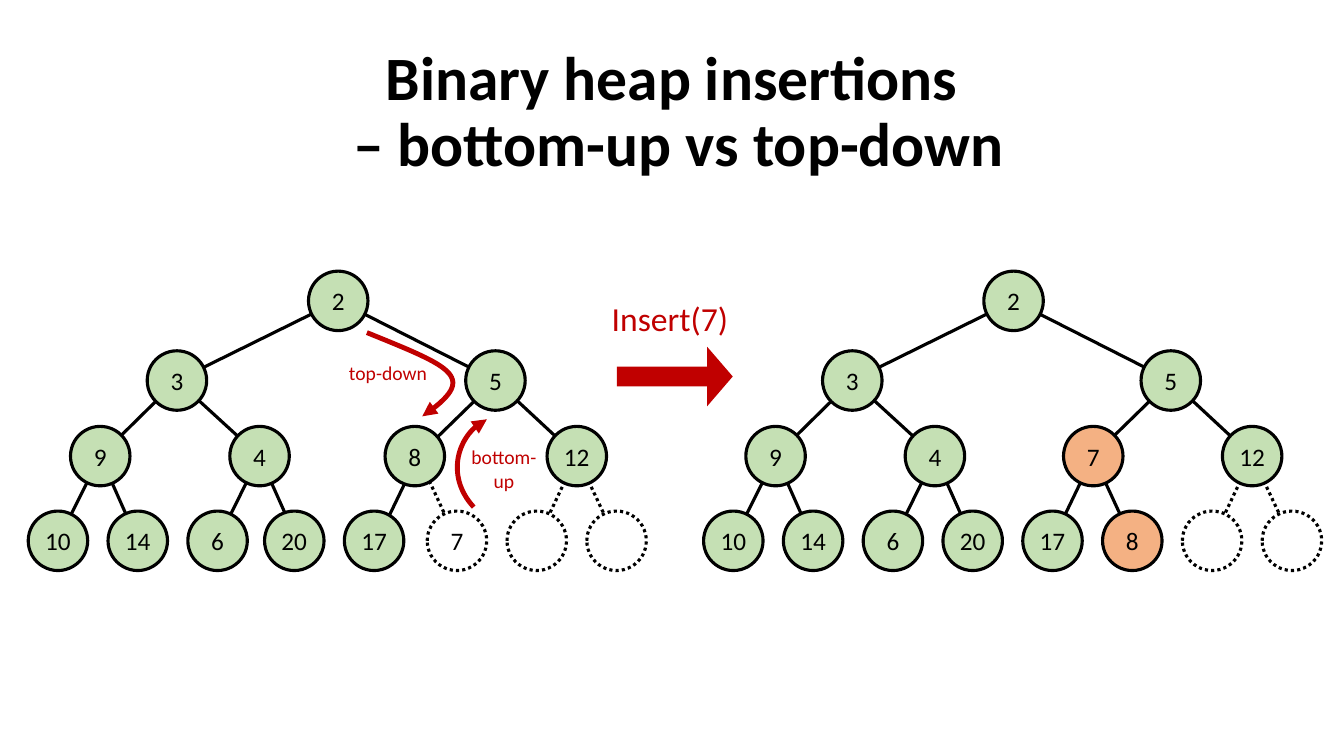
from lxml.etree import SubElement
from pptx import Presentation
from pptx.dml.color import RGBColor
from pptx.enum.dml import MSO_LINE
from pptx.enum.shapes import MSO_CONNECTOR, MSO_SHAPE
from pptx.enum.text import MSO_ANCHOR, MSO_AUTO_SIZE, PP_ALIGN
from pptx.oxml.ns import qn
from pptx.util import Pt

COLORS = {"ink": "000000", "node": "C5E0B4", "changed": "F4B183", "free": "FFFFFF", "accent": "C00000"}
DIAMETER = 42.5
LEVELS = [214.9, 271.8, 325.8, 386.3]
INNER_X = [241.6, 126.4, 353.9, 71.6, 185.4, 298.5, 412]
LEAF_X = [41.4 + 57 * leaf for leaf in range(8)]
CENTERS = [(x, LEVELS[(index + 1).bit_length() - 1]) for index, x in enumerate(INNER_X + LEAF_X)]


class HeapSlide:
    """Holds the font and colours and draws elements on one slide."""

    def __init__(self, presentation):
        self.font = "Calibri"
        self.slide = presentation.slides.add_slide(presentation.slide_layouts[5])

    def color(self, name):
        return RGBColor.from_string(COLORS[name])

    def add_text(self, frame, lines, size, color="ink", bold=False):
        paragraph = frame.paragraphs[0]
        paragraph.alignment = PP_ALIGN.CENTER
        for number, line in enumerate(lines):
            if number:
                paragraph.add_line_break()
            run = paragraph.add_run()
            run.text = line
            run.font.name = self.font
            run.font.size = Pt(size)
            run.font.bold = bold
            run.font.color.rgb = self.color(color)
        return paragraph

    def title(self, lines, left, top, width, height):
        shape = self.slide.shapes.title
        shape.left, shape.top, shape.width, shape.height = Pt(left), Pt(top), Pt(width), Pt(height)
        frame = shape.text_frame
        frame.auto_size = MSO_AUTO_SIZE.NONE
        frame.vertical_anchor = MSO_ANCHOR.MIDDLE
        self.add_text(frame, lines, 44, bold=True).line_spacing = 0.9

    def label(self, lines, left, top, width, height, size):
        shape = self.slide.shapes.add_textbox(Pt(left), Pt(top), Pt(width), Pt(height))
        shape.text_frame.word_wrap = True
        shape.text_frame.auto_size = MSO_AUTO_SIZE.SHAPE_TO_FIT_TEXT
        self.add_text(shape.text_frame, lines, size, "accent")

    def outline(self, shape, color="ink", width=2.25, dotted=False):
        shape.line.color.rgb = self.color(color)
        shape.line.width = Pt(width)
        if dotted:
            shape.line.dash_style = MSO_LINE.ROUND_DOT

    def edge(self, start, end, dotted):
        points = [Pt(value) for value in (*start, *end)]
        connector = self.slide.shapes.add_connector(MSO_CONNECTOR.STRAIGHT, *points)
        self.outline(connector, dotted=dotted)
        SubElement(connector._element.spPr, qn("a:effectLst"))

    def shape(self, kind, left, top, width, height, fill):
        shape = self.slide.shapes.add_shape(kind, Pt(left), Pt(top), Pt(width), Pt(height))
        shape.shadow.inherit = False
        shape.fill.solid()
        shape.fill.fore_color.rgb = self.color(fill)
        return shape

    def node(self, key, center, fill, dotted):
        left, top = (value - DIAMETER / 2 for value in center)
        shape = self.shape(MSO_SHAPE.OVAL, left, top, DIAMETER, DIAMETER, fill)
        self.outline(shape, dotted=dotted)
        frame = shape.text_frame
        frame.margin_left = frame.margin_right = 0
        frame.vertical_anchor = MSO_ANCHOR.MIDDLE
        if key:
            self.add_text(frame, [key], 18)

    def heap(self, left, keys, size, changed=(), nudges=None):
        centers = [(left + x, y) for x, y in CENTERS]
        for child in range(1, len(keys)):
            self.edge(centers[child], centers[(child - 1) // 2], child >= size)
        for index, (key, (x, y)) in enumerate(zip(keys, centers)):
            fill = "free" if index >= size else "changed" if index in changed else "node"
            self.node(key, (x + (nudges or {}).get(index, 0), y), fill, index >= size)

    def block_arrow(self, left, top, width, height):
        shape = self.shape(MSO_SHAPE.RIGHT_ARROW, left, top, width, height, "accent")
        shape.adjustments[0], shape.adjustments[1] = 0.33, 0.43
        shape.line.fill.background()

    def curved_arrow(self, controls, steps=32):
        points = []
        for step in range(steps + 1):
            t = step / steps
            weights = ((1 - t) ** 3, 3 * t * (1 - t) ** 2, 3 * t**2 * (1 - t), t**3)
            points.append(tuple(Pt(sum(w * c for w, c in zip(weights, axis))) for axis in zip(*controls)))
        builder = self.slide.shapes.build_freeform(*points[0])
        builder.add_line_segments(points[1:], close=False)
        shape = builder.convert_to_shape()
        shape.shadow.inherit = False
        shape.fill.background()
        self.outline(shape, "accent", 3.5)
        SubElement(shape.line._get_or_add_ln(), qn("a:tailEnd"), type="triangle")


def main():
    presentation = Presentation()
    presentation.slide_width, presentation.slide_height = Pt(960), Pt(540)
    slide = HeapSlide(presentation)
    slide.title(["Binary heap insertions", " – bottom-up vs top-down"], 0, 28.8, 960, 104.4)

    before = ["2", "3", "5", "9", "4", "8", "12", "10", "14", "6", "20", "17", "7", "", ""]
    after = before.copy()
    after[5], after[12] = before[12], before[5]
    slide.heap(0, before, 12, nudges={5: -2.2, 10: -2.2, 11: -2.2})
    slide.heap(482.4, after, 13, changed=(5, 12))

    slide.curved_arrow([(338.4, 362.2), (317.5, 339.8), (326.9, 309.6), (347.8, 299.5)])
    slide.curved_arrow([(262.1, 237.6), (324, 262.8), (342.7, 269.3), (301.7, 297.4)])
    slide.block_arrow(440.6, 247.7, 82.8, 42.5)
    slide.label(["Insert(7)"], 389.5, 209.5, 178, 36, 24)
    slide.label(["bottom-", "up"], 320.4, 314.6, 79.2, 41, 14)
    slide.label(["top-down"], 237.6, 254.2, 79.2, 24.5, 14)
    presentation.save("out.pptx")


if __name__ == "__main__":
    main()
